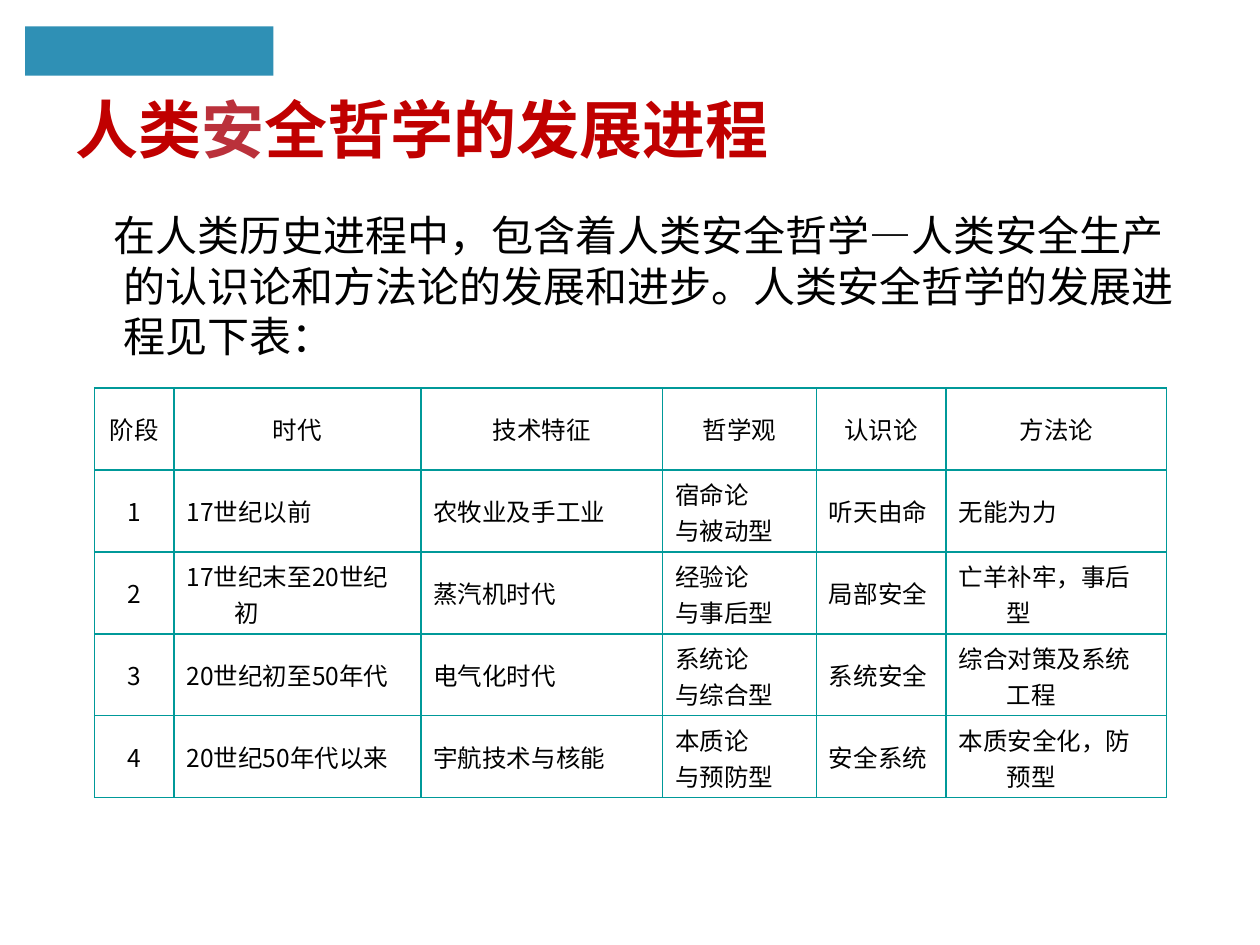
from lxml import etree
from pptx import Presentation
from pptx.dml.color import RGBColor
from pptx.enum.shapes import MSO_SHAPE
from pptx.enum.text import MSO_ANCHOR, MSO_AUTO_SIZE, PP_ALIGN
from pptx.oxml.ns import qn
from pptx.util import Inches, Pt

RECT = MSO_SHAPE.RECTANGLE
MIDDLE = MSO_ANCHOR.MIDDLE
NO_FIT = MSO_AUTO_SIZE.NONE
LEFT, CENTER = PP_ALIGN.LEFT, PP_ALIGN.CENTER

THEME = {
    "font": "Noto Sans CJK SC",
    "bar": "2F90B5", "title": "C00000", "accent": "BA313B",
    "text": "000000", "border": "009999",
    "title_size": 36, "body_size": 24, "cell_size": 14,
    "body_leading": 28.6, "border_width": 1,
}

prs = Presentation()
prs.slide_width, prs.slide_height = Inches(10), Inches(7.5)
COL, ROW = prs.slide_width / 100, prs.slide_height / 75  # 100 x 75 grid
HANG = 3.8  # hanging indent, in columns


def grid(x, y, w, h):
    return int(x * COL), int(y * ROW), int(w * COL), int(h * ROW)


def add_text(p, text, size, color, bold=False, align=LEFT, first=None):
    """Add a run; with first given, also hang the paragraph's later lines."""
    p.alignment = align
    if first is not None:
        pPr = p._p.get_or_add_pPr()
        pPr.set("marL", str(int(HANG * COL)))
        pPr.set("indent", str(int((first - HANG) * COL)))
    r = p.add_run()
    r.text = text
    font = {"name": THEME["font"], "size": Pt(THEME[size]), "bold": bold}
    for name, value in font.items():
        setattr(r.font, name, value)
    r.font.color.rgb = RGBColor.from_string(THEME[color])
    ea = etree.SubElement(r.font._element, qn("a:ea"))
    ea.set("typeface", THEME["font"])


s = prs.slides.add_slide(prs.slide_layouts[5])

# Corner bar
sp = s.shapes.add_shape(RECT, *grid(2, 2.1, 19.7, 3.9))
sp.shadow.inherit = False
sp.fill.solid()
sp.fill.fore_color.rgb = RGBColor.from_string(THEME["bar"])
sp.line.fill.background()

# Title
title = s.shapes.title
title.left, title.top, title.width, title.height = grid(5, 5.8, 90, 8.7)
tf = title.text_frame
tf.auto_size, tf.vertical_anchor = NO_FIT, MIDDLE
for text, color in (("人类", "title"), ("安", "accent"),
                    ("全哲学的发展进程", "title")):
    add_text(tf.paragraphs[0], text, "title_size", color, bold=True)

# Introduction
tf = s.shapes.add_textbox(*grid(5, 16.2, 90, 14)).text_frame
tf.word_wrap = True
p = tf.paragraphs[0]
p.line_spacing = Pt(THEME["body_leading"])
add_text(p, "在人类历史进程中，包含着人类安全哲学—人类安全生产的认识论和方法论的"
            "发展和进步。人类安全哲学的发展进程见下表：",
         "body_size", "text", first=3)

# Table of stages
WIDTHS = (6.3, 19.6, 19.2, 12.2, 10.3, 17.5)
STAGES = (
    ("阶段", "时代", "技术特征", "哲学观", "认识论", "方法论"),
    ("1", "17世纪以前", "农牧业及手工业", "宿命论\n与被动型",
     "听天由命", "无能为力"),
    ("2", "17世纪末至20世纪初", "蒸汽机时代", "经验论\n与事后型",
     "局部安全", "亡羊补牢，事后型"),
    ("3", "20世纪初至50年代", "电气化时代", "系统论\n与综合型",
     "系统安全", "综合对策及系统工程"),
    ("4", "20世纪50年代以来", "宇航技术与核能", "本质论\n与预防型",
     "安全系统", "本质安全化，防预型"),
)
table = s.shapes.add_table(len(STAGES), len(WIDTHS),
                           *grid(7.5, 30.8, sum(WIDTHS), 32.5)).table
table.first_row = table.horz_banding = False
for column, width in zip(table.columns, WIDTHS):
    column.width = int(width * COL)

for i, stage in enumerate(STAGES):
    for j, text in enumerate(stage):
        cell = table.cell(i, j)
        cell.vertical_anchor = MIDDLE
        tf = cell.text_frame
        for n, line in enumerate(text.split("\n")):
            p = tf.add_paragraph() if n else tf.paragraphs[0]
            add_text(p, line, "cell_size", "text", first=0,
                     align=CENTER if i == 0 or j == 0 else LEFT)
        # Borders come before the fill in the cell properties
        tcPr = cell._tc.get_or_add_tcPr()
        for side in ("a:lnL", "a:lnR", "a:lnT", "a:lnB"):
            ln = etree.SubElement(tcPr, qn(side),
                                  w=str(Pt(THEME["border_width"])))
            fill = etree.SubElement(ln, qn("a:solidFill"))
            etree.SubElement(fill, qn("a:srgbClr"), val=THEME["border"])
        cell.fill.background()

prs.save("out.pptx")
